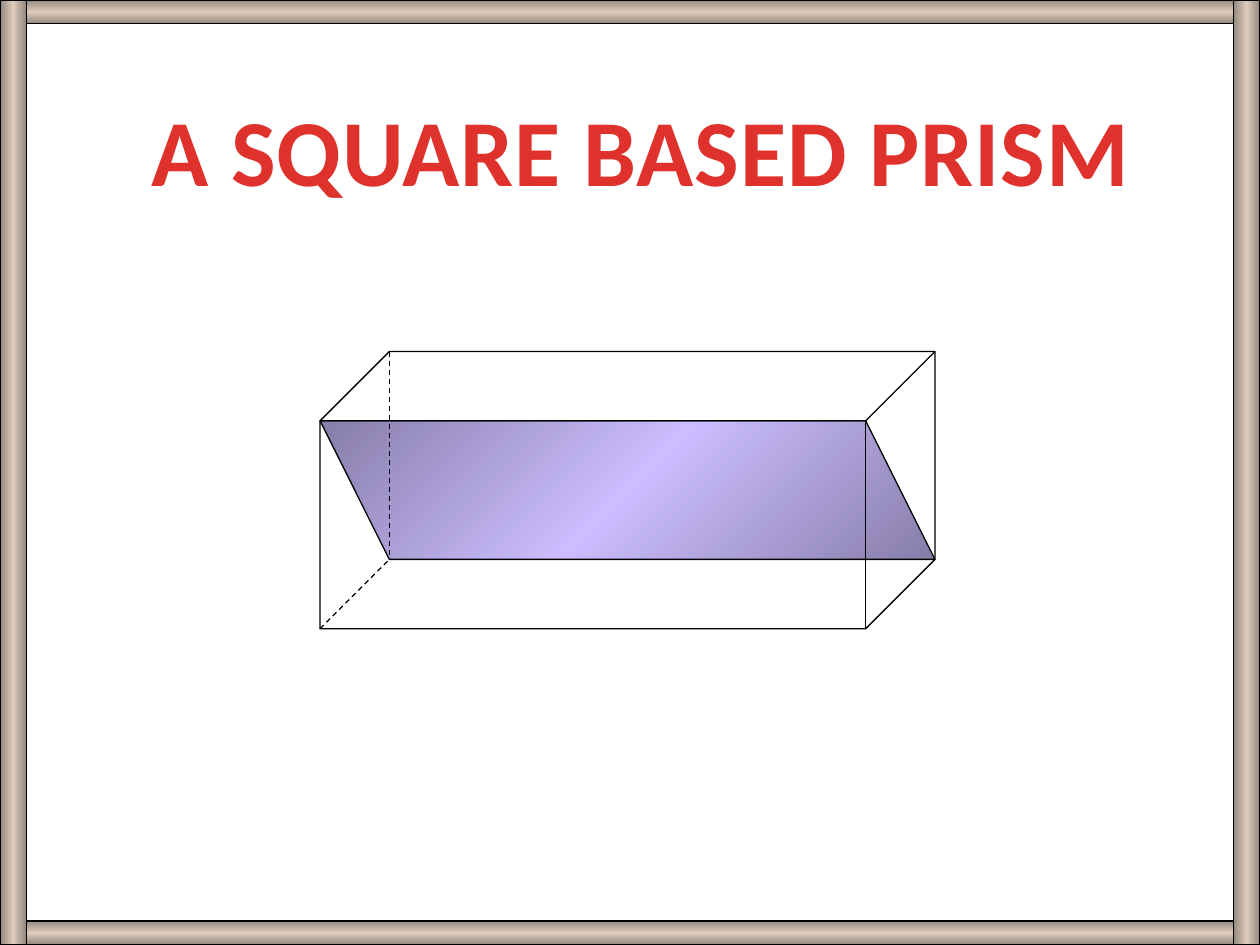
from copy import deepcopy

from pptx import Presentation
from pptx.dml.color import RGBColor
from pptx.enum.dml import MSO_LINE
from pptx.enum.shapes import MSO_CONNECTOR as Connector, MSO_SHAPE as Shape
from pptx.enum.text import MSO_AUTO_SIZE as AutoSize, PP_ALIGN as Align
from pptx.oxml.ns import qn
from pptx.util import Inches, Pt

WIDTH, HEIGHT = Inches(10), Inches(7.5)

BLACK = RGBColor(0x00, 0x00, 0x00)
RED = RGBColor(0xE0, 0x32, 0x2D)
WOOD_DARK = RGBColor(0x93, 0x87, 0x7D)
WOOD_LIGHT = RGBColor(0xDE, 0xCC, 0xBC)
PURPLE_DARK = RGBColor(0x87, 0x7D, 0xA9)
PURPLE_LIGHT = RGBColor(0xCB, 0xBD, 0xFF)


def across(percent):
    return round(WIDTH * percent / 100)


def down(percent):
    return round(HEIGHT * percent / 100)


def outline(shape):
    shape.line.color.rgb = BLACK
    shape.line.width = Pt(0.75)


def shade(shape, edge, middle, angle):
    """Blend edge to middle to edge; the angle runs counter-clockwise."""
    shape.shadow.inherit = False
    fill = shape.fill
    fill.gradient()
    fill.gradient_angle = angle
    stop_list = shape._element.spPr.find(qn("a:gradFill")).find(qn("a:gsLst"))
    stop_list.append(deepcopy(stop_list[0]))
    blend = ((0, edge), (0.5, middle), (1, edge))
    for stop, (position, color) in zip(fill.gradient_stops, blend):
        stop.position = position
        stop.color.rgb = color
    outline(shape)


def add_bar(page, left, top, width, height, angle):
    bar = page.shapes.add_shape(Shape.RECTANGLE, left, top, width, height)
    shade(bar, WOOD_DARK, WOOD_LIGHT, angle)


def add_frame(page):
    thick_x, thick_y = across(2.1), down(2.53)
    for top in (0, HEIGHT - thick_y):
        add_bar(page, 0, top, WIDTH, thick_y, 270)
    for left in (0, WIDTH - thick_x):
        add_bar(page, left, 0, thick_x, HEIGHT, 0)


def add_section(page, corners):
    builder = page.shapes.build_freeform(*corners[0], scale=1.0)
    builder.add_line_segments(corners[1:], close=True)
    shade(builder.convert_to_shape(), PURPLE_DARK, PURPLE_LIGHT, 315)


def add_hidden_edge(group, start, end):
    edge = group.shapes.add_connector(Connector.STRAIGHT, *start, *end)
    outline(edge)
    edge.line.dash_style = MSO_LINE.DASH
    properties = edge._element.spPr
    properties.append(properties.makeelement(qn("a:effectLst"), {}))


def add_prism(page, left, top, width, height, hidden_edges):
    group = page.shapes.add_group_shape()
    prism = group.shapes.add_shape(Shape.CUBE, left, top, width, height)
    prism.adjustments[0] = 0.25
    prism.shadow.inherit = False
    prism.fill.background()
    outline(prism)
    for start, end in hidden_edges:
        add_hidden_edge(group, start, end)


def add_title(page, text):
    box = page.shapes.add_textbox(across(10.6), down(9.07), across(80.5), down(13.47))
    frame = box.text_frame
    frame.word_wrap = False
    frame.auto_size = AutoSize.SHAPE_TO_FIT_TEXT
    para = frame.paragraphs[0]
    para.alignment = Align.CENTER
    para.font.name = "Calibri"
    para.font.size = Pt(54)
    para.font.bold = True
    para.font.color.rgb = RED
    span = para.add_run()
    span.text = text
    span._r.get_or_add_rPr().set("spc", "50")


def main():
    deck = Presentation()
    deck.slide_width, deck.slide_height = WIDTH, HEIGHT
    page = deck.slides.add_slide(deck.slide_layouts[6])

    # Prism corners, with the depth a quarter of the height
    left, top = across(25.4), down(37.2)
    width, height = across(48.8), down(29.33)
    depth = height // 4
    right, bottom = left + width, top + height
    front_top_left = (left, top + depth)
    front_top_right = (right - depth, top + depth)
    front_bottom_left = (left, bottom)
    back_top_left = (left + depth, top)
    back_bottom_left = (left + depth, bottom - depth)
    back_bottom_right = (right, bottom - depth)

    # Diagonal section, behind everything else
    add_section(page, [front_top_left, front_top_right,
                       back_bottom_right, back_bottom_left])

    # Wooden frame
    add_frame(page)

    # Prism, whose hidden edges meet at the back bottom left corner
    add_prism(page, left, top, width, height, [
        (corner, back_bottom_left)
        for corner in (back_top_left, back_bottom_right, front_bottom_left)
    ])

    # Title
    add_title(page, "A SQUARE BASED PRISM")

    deck.save("out.pptx")


if __name__ == "__main__":
    main()
